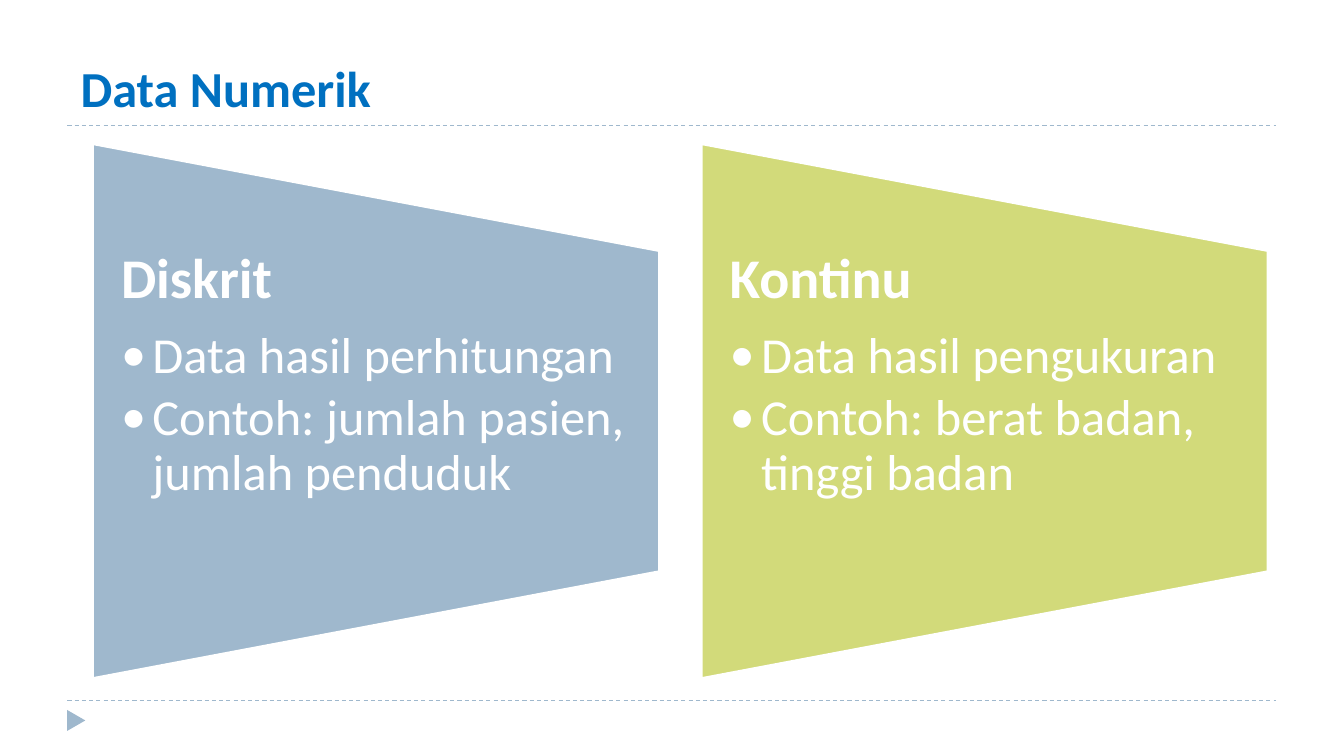
from dataclasses import dataclass

from lxml import etree
from pptx import Presentation
from pptx.dml.color import RGBColor
from pptx.enum.dml import MSO_LINE
from pptx.enum.shapes import MSO_CONNECTOR, MSO_SHAPE
from pptx.enum.text import MSO_ANCHOR, MSO_AUTO_SIZE, PP_ALIGN
from pptx.oxml.ns import qn
from pptx.util import Cm, Pt

STRAIGHT = MSO_CONNECTOR.STRAIGHT
TRAPEZOID = MSO_SHAPE.FLOWCHART_MANUAL_OPERATION
TRIANGLE = MSO_SHAPE.ISOSCELES_TRIANGLE
DASH = MSO_LINE.DASH
LEFT = PP_ALIGN.LEFT
TOP, BOTTOM = MSO_ANCHOR.TOP, MSO_ANCHOR.BOTTOM
NO_AUTOFIT = MSO_AUTO_SIZE.NONE

BLUE = RGBColor(0x00, 0x70, 0xC0)
STEEL = RGBColor(0x9F, 0xB8, 0xCD)
LIME = RGBColor(0xD2, 0xDA, 0x7A)
WHITE = RGBColor(0xFF, 0xFF, 0xFF)
FONT = "Calibri"
TWO_CONTENT_LAYOUT = 3

PANEL_LEFT, PANEL_STEP = 2.34, 15.34
PANEL_WIDTH, PANEL_HEIGHT = 14.27, 13.46
PANEL_TOP = 3.63
TEXT_TOP, TEXT_HEIGHT = 6.3, 8.08
BULLET_INDENT = Cm(0.79)


@dataclass
class DataKind:
    name: str
    points: list[str]
    color: RGBColor


KINDS = [
    DataKind("Diskrit", ["Data hasil perhitungan",
                         "Contoh: jumlah pasien, jumlah penduduk"], STEEL),
    DataKind("Kontinu", ["Data hasil pengukuran",
                         "Contoh: berat badan, tinggi badan"], LIME),
]


def place(shape, left: float, top: float, width: float, height: float) -> None:
    shape.left, shape.top = Cm(left), Cm(top)
    shape.width, shape.height = Cm(width), Cm(height)


def set_frame(frame, anchor, side: float, edge: float) -> None:
    frame.word_wrap = True
    frame.auto_size = NO_AUTOFIT
    frame.vertical_anchor = anchor
    frame.margin_left = frame.margin_right = Cm(side)
    frame.margin_top = frame.margin_bottom = Cm(edge)


def add_run(paragraph, text: str, size: int, color: RGBColor, bold: bool) -> None:
    run = paragraph.add_run()
    run.text = text
    run.font.name = FONT
    run.font.size = Pt(size)
    run.font.bold = bold
    run.font.color.rgb = color


def set_paragraph(paragraph, after: float, bulleted: bool) -> None:
    paragraph.alignment = LEFT
    paragraph.line_spacing = 0.9
    paragraph.space_before = Pt(0)
    paragraph.space_after = Pt(after)
    paragraph.level = int(bulleted)
    indent = BULLET_INDENT if bulleted else 0
    properties = paragraph._p.get_or_add_pPr()
    properties.set("marL", str(indent))
    properties.set("indent", str(-indent))
    if bulleted:
        etree.SubElement(properties, qn("a:buFont")).set("typeface", FONT)
        etree.SubElement(properties, qn("a:buChar")).set("char", "•")
    else:
        etree.SubElement(properties, qn("a:buNone"))


def add_rule(slide, y: float) -> None:
    rule = slide.shapes.add_connector(STRAIGHT, Cm(1.7), Cm(y), Cm(32.16), Cm(y))
    rule.line.color.rgb = STEEL
    rule.line.width = Pt(0.75)
    rule.line.dash_style = DASH
    etree.SubElement(rule._element.spPr, qn("a:effectLst"))


def add_turned_shape(slide, preset, color: RGBColor, rotation: int,
                     left: float, top: float, width: float, height: float):
    """Add a quarter-turned shape that covers the given box."""
    shift = (width - height) / 2
    shape = slide.shapes.add_shape(preset, Cm(left + shift), Cm(top - shift),
                                   Cm(height), Cm(width))
    shape.rotation = rotation
    shape.shadow.inherit = False
    shape.fill.solid()
    shape.fill.fore_color.rgb = color
    shape.line.fill.background()
    return shape


def add_kind(slide, body, kind: DataKind, left: float) -> None:
    panel = add_turned_shape(slide, TRAPEZOID, kind.color, 270,
                             left, PANEL_TOP, PANEL_WIDTH, PANEL_HEIGHT)
    panel.line.color.rgb = WHITE
    panel.line.width = Pt(1.5)
    # Panel goes behind its text
    body._element.addprevious(panel._element)

    place(body, left, TEXT_TOP, PANEL_WIDTH, TEXT_HEIGHT)
    frame = body.text_frame
    set_frame(frame, TOP, 0.71, 0)
    heading = frame.paragraphs[0]
    set_paragraph(heading, 14, False)
    add_run(heading, kind.name, 40, WHITE, True)
    for point in kind.points:
        item = frame.add_paragraph()
        set_paragraph(item, 5.4, True)
        add_run(item, point, 36, WHITE, False)


def main() -> None:
    deck = Presentation()
    deck.slide_width, deck.slide_height = Cm(33.87), Cm(19.05)
    slide = deck.slides.add_slide(deck.slide_layouts[TWO_CONTENT_LAYOUT])
    title, *bodies = slide.placeholders

    # Title
    place(title, 1.73, 0.38, 30.48, 2.74)
    set_frame(title.text_frame, BOTTOM, 0.3, 0.15)
    title_line = title.text_frame.paragraphs[0]
    title_line.alignment = LEFT
    add_run(title_line, "Data Numerik", 36, BLUE, True)

    # Dashed rules and corner marker
    for y in (3.17, 17.65):
        add_rule(slide, y)
    add_turned_shape(slide, TRIANGLE, STEEL, 90, 1.69, 17.89, 0.46, 0.53)

    # Kinds of numeric data
    for index, (body, kind) in enumerate(zip(bodies, KINDS)):
        add_kind(slide, body, kind, PANEL_LEFT + index * PANEL_STEP)

    deck.save("out.pptx")


if __name__ == "__main__":
    main()
